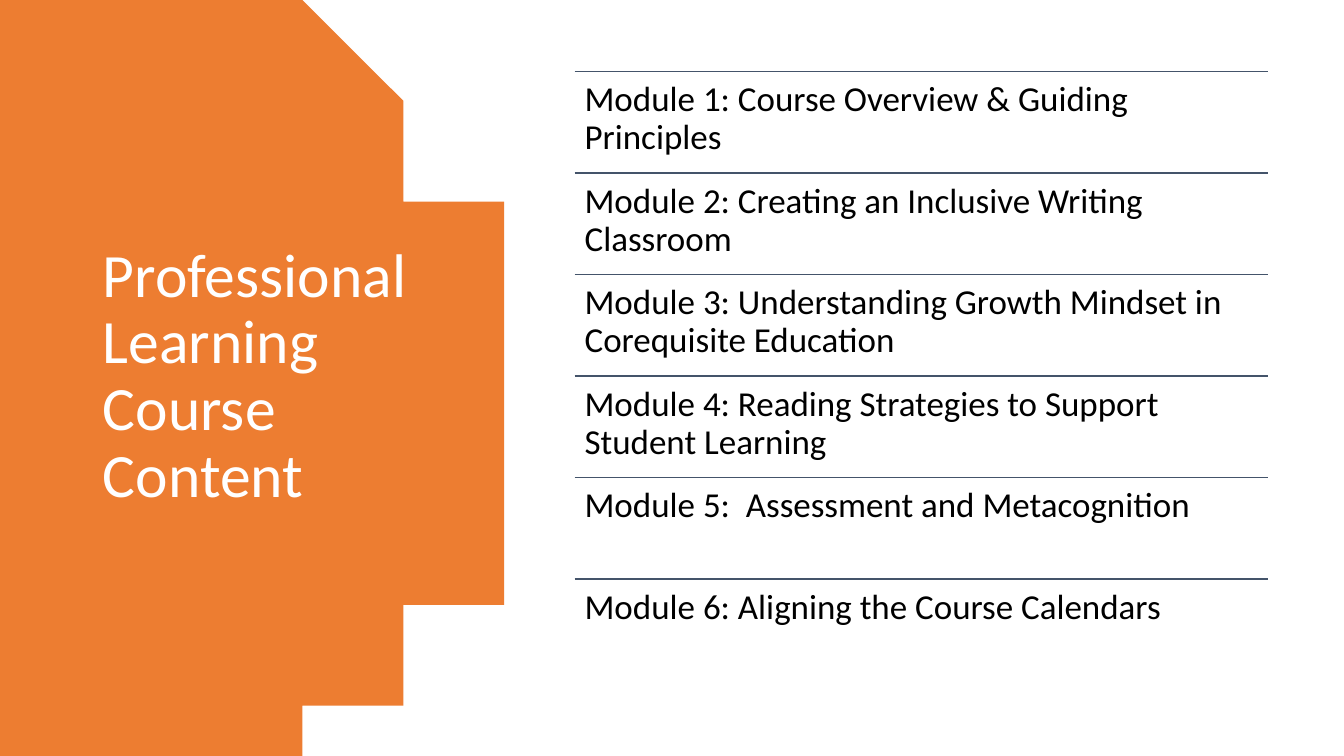
import math

import pptx
import pptx.dml.color
import pptx.enum.shapes
import pptx.enum.text
import pptx.oxml
import pptx.oxml.ns
import pptx.util

Inches = pptx.util.Inches
Pt = pptx.util.Pt
RGBColor = pptx.dml.color.RGBColor

ORANGE = RGBColor(0xED, 0x7D, 0x31)
SLATE = RGBColor(0x44, 0x54, 0x6A)
WHITE = RGBColor(0xFF, 0xFF, 0xFF)
BLACK = RGBColor(0x00, 0x00, 0x00)

FONT = "Calibri"
SLIDE_WIDTH, SLIDE_HEIGHT = 13.33, 7.5
ARC_STEPS = 80

TITLE = "Professional Learning\nCourse\nContent"
MODULES = [
    "Module 1: Course Overview & Guiding Principles",
    "Module 2: Creating an Inclusive Writing Classroom",
    "Module 3: Understanding Growth Mindset in Corequisite Education",
    "Module 4: Reading Strategies to Support Student Learning",
    "Module 5:  Assessment and Metacognition",
    "Module 6: Aligning the Course Calendars",
]


def add_text(shapes, box, text, size, color, anchor, inset):
    """Add one wrapped paragraph; box is left, top, width, height in inches."""
    text_box = shapes.add_textbox(*(Inches(length) for length in box))
    frame = text_box.text_frame
    frame.word_wrap = True
    frame.vertical_anchor = anchor
    frame.margin_left = frame.margin_right = Inches(0.1)
    frame.margin_top = frame.margin_bottom = Inches(inset)
    paragraph = frame.paragraphs[0]
    paragraph.text = text
    paragraph.line_spacing = 0.9
    for run in paragraph.runs:
        run.font.name = FONT
        run.font.size = Pt(size)
        run.font.color.rgb = color


def add_title_panel(slide, box):
    """Fill the box with a panel whose right side is an arc, and title it."""
    left, top, width, height = box
    # The arc is cut from a circle and bulges to the right edge of the box
    bulge = 0.426 * width
    radius = (bulge ** 2 + (height / 2) ** 2) / (2 * bulge)
    center_x, center_y = left + width - radius, top + height / 2
    half_angle = math.asin(height / 2 / radius)
    angles = [half_angle * (2 * step / ARC_STEPS - 1) for step in range(ARC_STEPS + 1)]
    arc = [(center_x + radius * math.cos(angle), center_y + radius * math.sin(angle))
           for angle in angles]
    builder = slide.shapes.build_freeform(left, top, scale=float(Inches(1)))
    builder.add_line_segments(arc + [(left, top + height)], close=True)
    panel = builder.convert_to_shape()
    panel.shadow.inherit = False
    panel.fill.solid()
    panel.fill.fore_color.rgb = ORANGE
    panel.line.fill.background()

    title_box = (left + 0.187 * width, top + 0.093 * height, 0.655 * width, 0.812 * height)
    add_text(slide.shapes, title_box, TITLE, 44, WHITE,
             pptx.enum.text.MSO_ANCHOR.MIDDLE, 0.05)


def add_module_list(slide, box):
    """Divide the box into equal rows, each a rule with a module name under it."""
    left, top, width, height = box
    row_height = height / len(MODULES)
    shapes = slide.shapes.add_group_shape().shapes
    for row, module in enumerate(MODULES):
        row_top = top + row * row_height
        rule = shapes.add_connector(
            pptx.enum.shapes.MSO_CONNECTOR.STRAIGHT,
            Inches(left), Inches(row_top), Inches(left + width), Inches(row_top))
        rule.line.color.rgb = SLATE
        rule.line.width = Pt(1)
        properties = rule.element.find(pptx.oxml.ns.qn("p:spPr"))
        properties.append(pptx.oxml.parse_xml(
            "<a:effectLst %s/>" % pptx.oxml.ns.nsdecls("a")))
        add_text(shapes, (left, row_top, width, row_height), module, 25, BLACK,
                 pptx.enum.text.MSO_ANCHOR.TOP, 0.1)


def main():
    presentation = pptx.Presentation()
    presentation.slide_width = Inches(SLIDE_WIDTH)
    presentation.slide_height = Inches(SLIDE_HEIGHT)
    slide = presentation.slides.add_slide(presentation.slide_layouts[6])
    # Left: title panel
    add_title_panel(slide, (0, 0, 0.37 * SLIDE_WIDTH, SLIDE_HEIGHT))
    # Right: list of modules
    add_module_list(slide, (5.7, 0.71, 6.88, 6.04))
    presentation.save("out.pptx")


if __name__ == "__main__":
    main()
